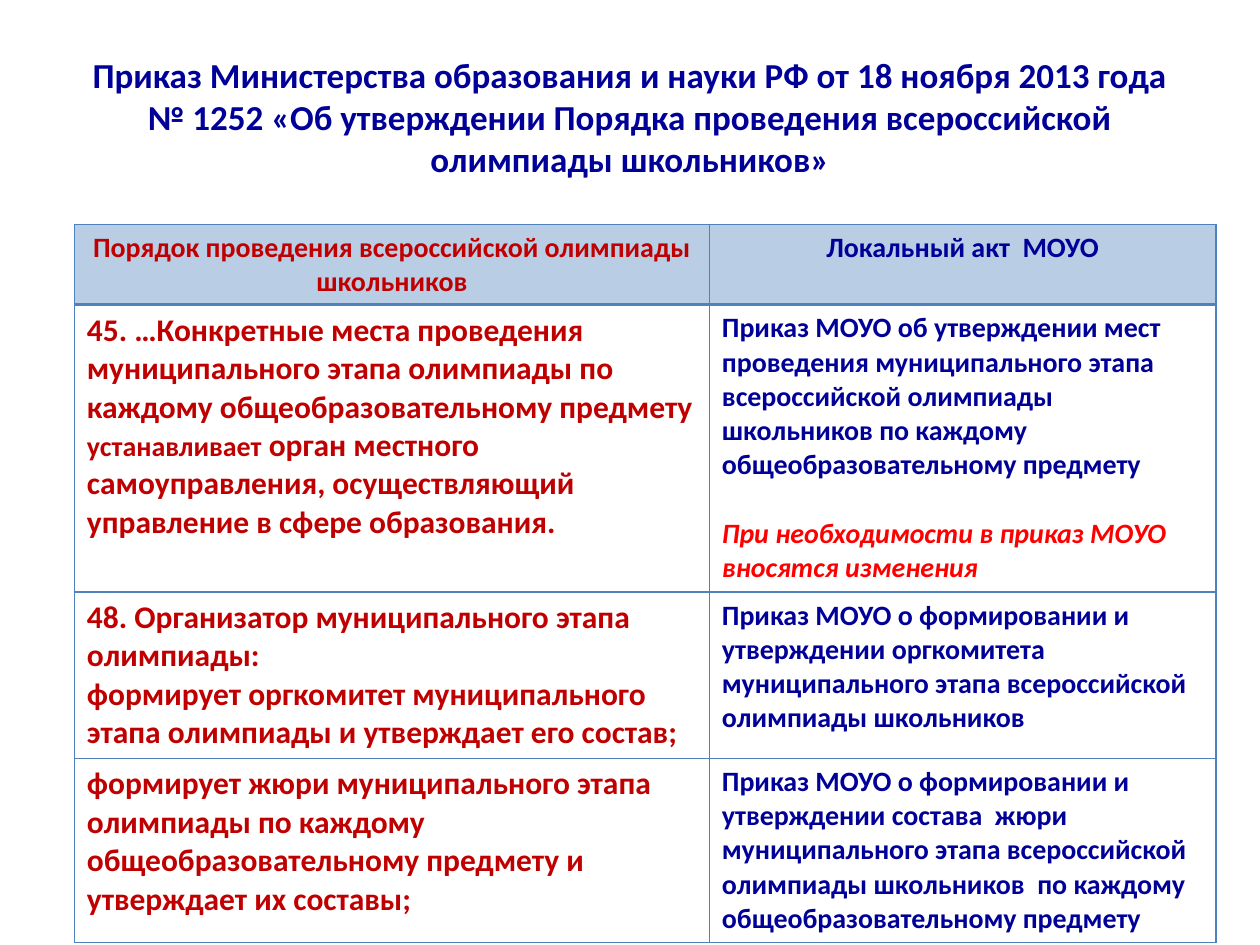
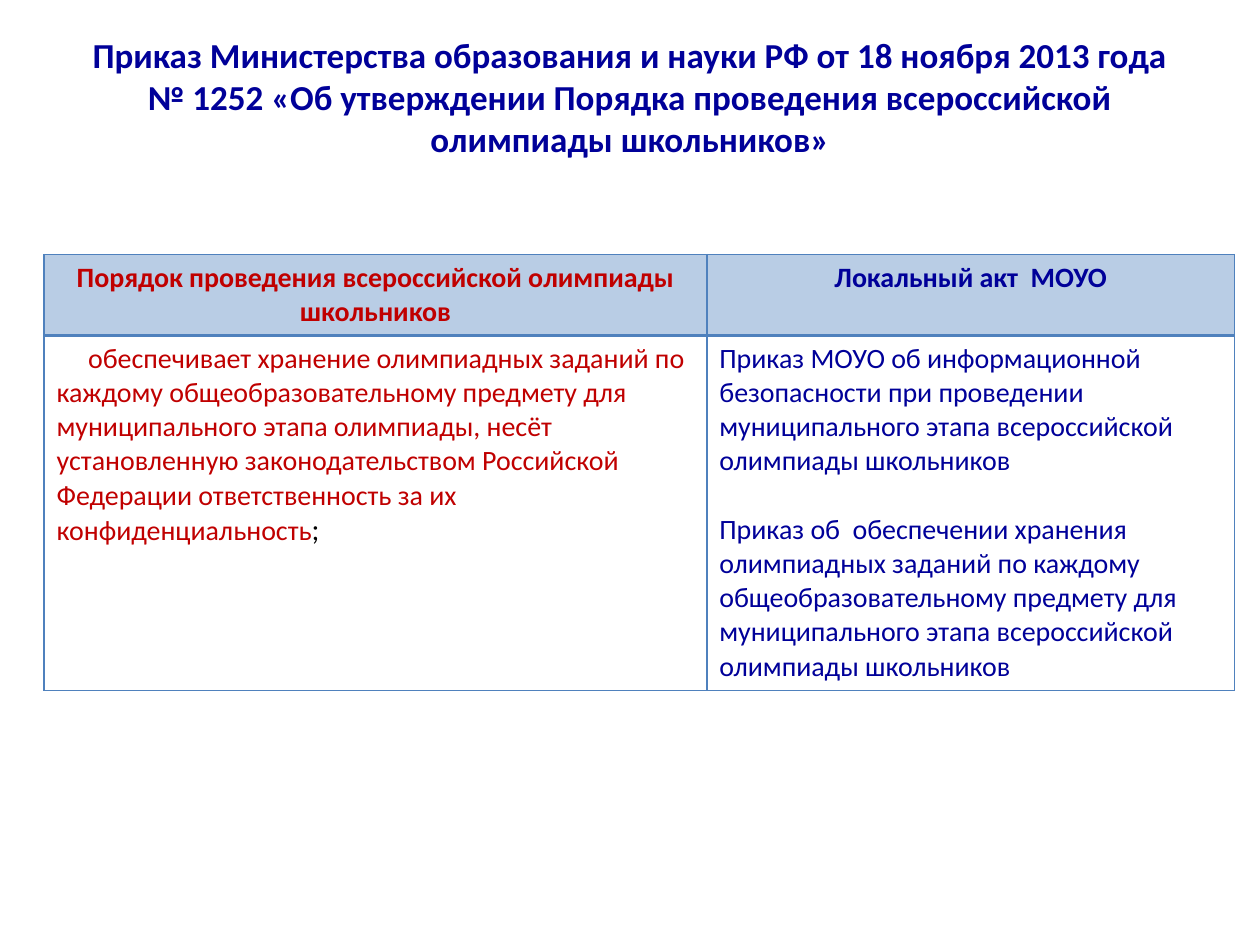
from lxml import etree
from pptx import Presentation
from pptx.dml.color import RGBColor
from pptx.enum.text import MSO_ANCHOR, PP_ALIGN
from pptx.oxml.ns import qn
from pptx.util import Inches, Pt

CENTER, LEFT = PP_ALIGN.CENTER, PP_ALIGN.LEFT
MIDDLE = MSO_ANCHOR.MIDDLE
COLOURS = {"navy": "000099", "crimson": "C00000", "red": "FF0000", "black": "000000",
           "header": "B9CDE5", "border": "4F81BD", "white": "FFFFFF"}
FONT = "Calibri"
BLANK_LINE = 19.5

TITLE = ("Приказ Министерства образования и науки РФ от 18 ноября 2013 года № 1252 "
         "«Об утверждении Порядка проведения всероссийской олимпиады школьников»")
HEADERS = ["Порядок проведения всероссийской олимпиады школьников", "Локальный акт  МОУО"]

# Each cell is a list of paragraphs: spans (text, changes) and paragraph options
PAGES = [
    {"title_height": 1.25, "left": 0.59, "top": 1.78, "columns": [5.04, 4.02],
     "heights": [0.64, 2.28, 1.32, 1.46], "bold": True, "sizes": [18, 16],
     "rows": [
         [[([("45. …Конкретные места проведения муниципального этапа олимпиады по каждому "
              "общеобразовательному предмету ", {}),
             ("устанавливает", {"size": 16}),
             (" орган местного самоуправления, осуществляющий управление в сфере "
              "образования.", {})], {})],
          [([("Приказ МОУО об утверждении мест проведения муниципального этапа всероссийской "
              "олимпиады школьников по каждому общеобразовательному предмету", {})], {}),
           ([("При необходимости в приказ МОУО вносятся изменения",
              {"colour": "red", "italic": True})], {"before": BLANK_LINE})]],
         [[([("48. Организатор муниципального этапа олимпиады:", {})], {}),
           ([("формирует оргкомитет муниципального этапа олимпиады и утверждает его "
              "состав;", {})], {})],
          [([("Приказ МОУО о формировании и утверждении оргкомитета муниципального этапа "
              "всероссийской олимпиады школьников", {})], {})]],
         [[([("формирует жюри муниципального этапа олимпиады по каждому общеобразовательному "
              "предмету и утверждает их составы;", {})], {})],
          [([("Приказ МОУО о формировании и утверждении состава  жюри муниципального этапа "
              "всероссийской олимпиады школьников  по каждому общеобразовательному "
              "предмету", {})], {})]],
     ]},
    {"title_height": 0.93, "left": 0.35, "top": 2.02, "columns": [5.26, 4.19],
     "heights": [0.64, 2.82], "bold": False, "sizes": [16, 16],
     "rows": [
         [[([("обеспечивает хранение олимпиадных заданий по каждому общеобразовательному "
              "предмету для муниципального этапа олимпиады, несёт установленную "
              "законодательством Российской Федерации ответственность за их "
              "конфиденциальность", {}),
             (";", {"font": "Lato", "colour": "black"})], {"indent": 0.25})],
          [([("Приказ МОУО об информационной безопасности при проведении муниципального "
              "этапа всероссийской олимпиады школьников", {})], {}),
           ([("Приказ об  обеспечении хранения олимпиадных заданий по каждому "
              "общеобразовательному предмету для муниципального этапа всероссийской "
              "олимпиады школьников", {})], {"before": BLANK_LINE})]],
     ]},
]


def write_text(frame, paragraphs, size, colour, bold, align):
    for index, (spans, options) in enumerate(paragraphs):
        para = frame.add_paragraph() if index else frame.paragraphs[0]
        para.alignment = align
        para.font.name, para.font.size, para.font.bold = FONT, Pt(size), bold
        para.font.color.rgb = RGBColor.from_string(COLOURS[colour])
        if "before" in options:
            para.space_before = Pt(options["before"])
        if "indent" in options:
            para._p.get_or_add_pPr().set("indent", str(Inches(options["indent"])))
        for text, changes in spans:
            span = para.add_run()
            span.text = text
            span.font.name = changes.get("font", FONT)
            span.font.size = Pt(changes.get("size", size))
            span.font.bold = bold
            span.font.italic = changes.get("italic")
            span.font.color.rgb = RGBColor.from_string(COLOURS[changes.get("colour", colour)])


def style_cell(cell, fill, widths):
    cell.fill.solid()
    cell.fill.fore_color.rgb = RGBColor.from_string(COLOURS[fill])
    properties = cell._tc.get_or_add_tcPr()
    for index, (side, width) in enumerate(zip("LRTB", widths)):
        line = etree.Element(qn(f"a:ln{side}"), w=str(Pt(width)))
        solid = etree.SubElement(line, qn("a:solidFill"))
        etree.SubElement(solid, qn("a:srgbClr"), val=COLOURS["border"])
        properties.insert(index, line)


deck = Presentation()
deck.slide_width, deck.slide_height = Inches(10), Inches(7.5)

for content in PAGES:
    page = deck.slides.add_slide(deck.slide_layouts[6])

    # Title
    box = page.shapes.add_textbox(Inches(0.5), Inches(0.3), Inches(9),
                                  Inches(content["title_height"]))
    box.text_frame.word_wrap = True
    box.text_frame.vertical_anchor = MIDDLE
    write_text(box.text_frame, [([(TITLE, {})], {})], 20, "navy", True, CENTER)

    # Table of regulations and local acts
    header = [[([(text, {})], {})] for text in HEADERS]
    rows = [header] + content["rows"]
    table = page.shapes.add_table(
        len(rows), len(HEADERS), Inches(content["left"]), Inches(content["top"]),
        Inches(sum(content["columns"])), Inches(sum(content["heights"]))).table
    table.horz_banding = False
    for column, width in zip(table.columns, content["columns"]):
        column.width = Inches(width)
    for row_index, row in enumerate(rows):
        table.rows[row_index].height = Inches(content["heights"][row_index])
        is_header = row_index == 0
        for column_index, paragraphs in enumerate(row):
            cell = table.cell(row_index, column_index)
            size = 16 if is_header else content["sizes"][column_index]
            write_text(cell.text_frame, paragraphs, size, ["crimson", "navy"][column_index],
                       is_header or content["bold"], CENTER if is_header else LEFT)
            style_cell(cell, "header" if is_header else "white",
                       [1, 1, 2 if row_index == 1 else 1, 2 if is_header else 1])

deck.save("out.pptx")
